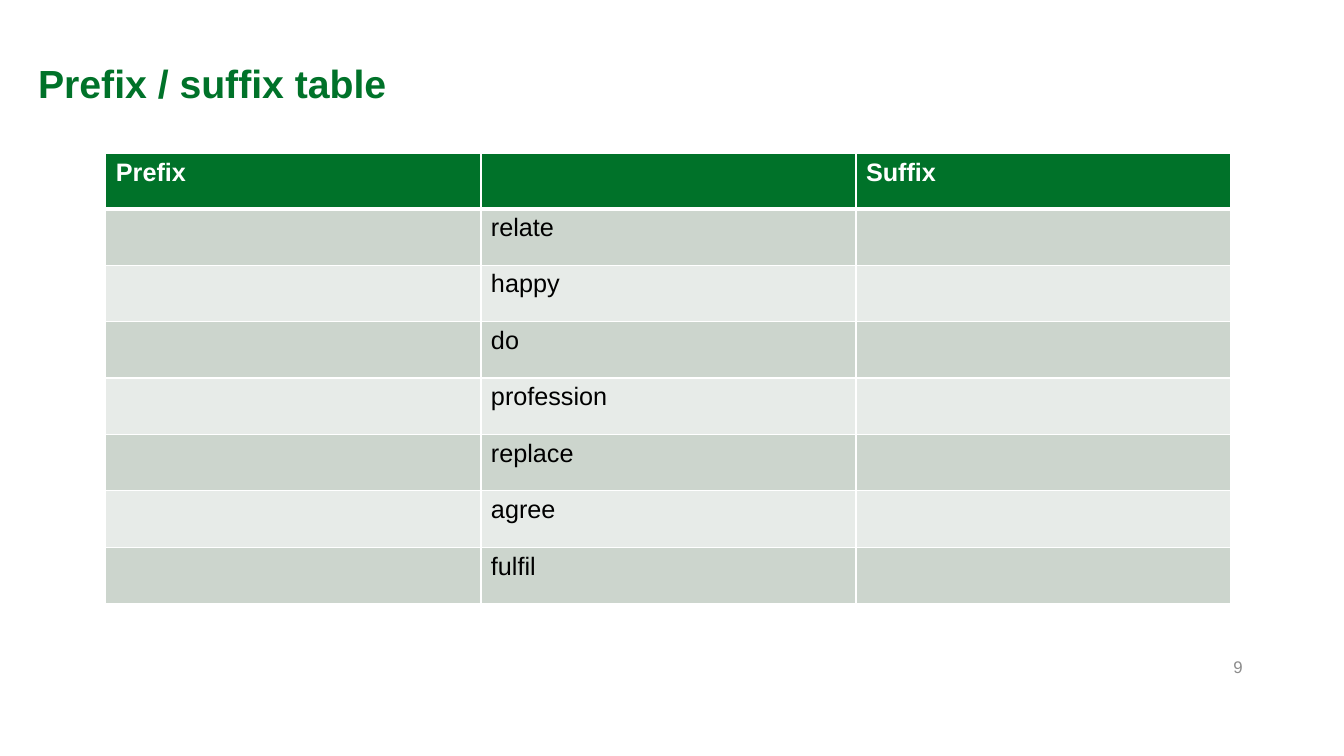
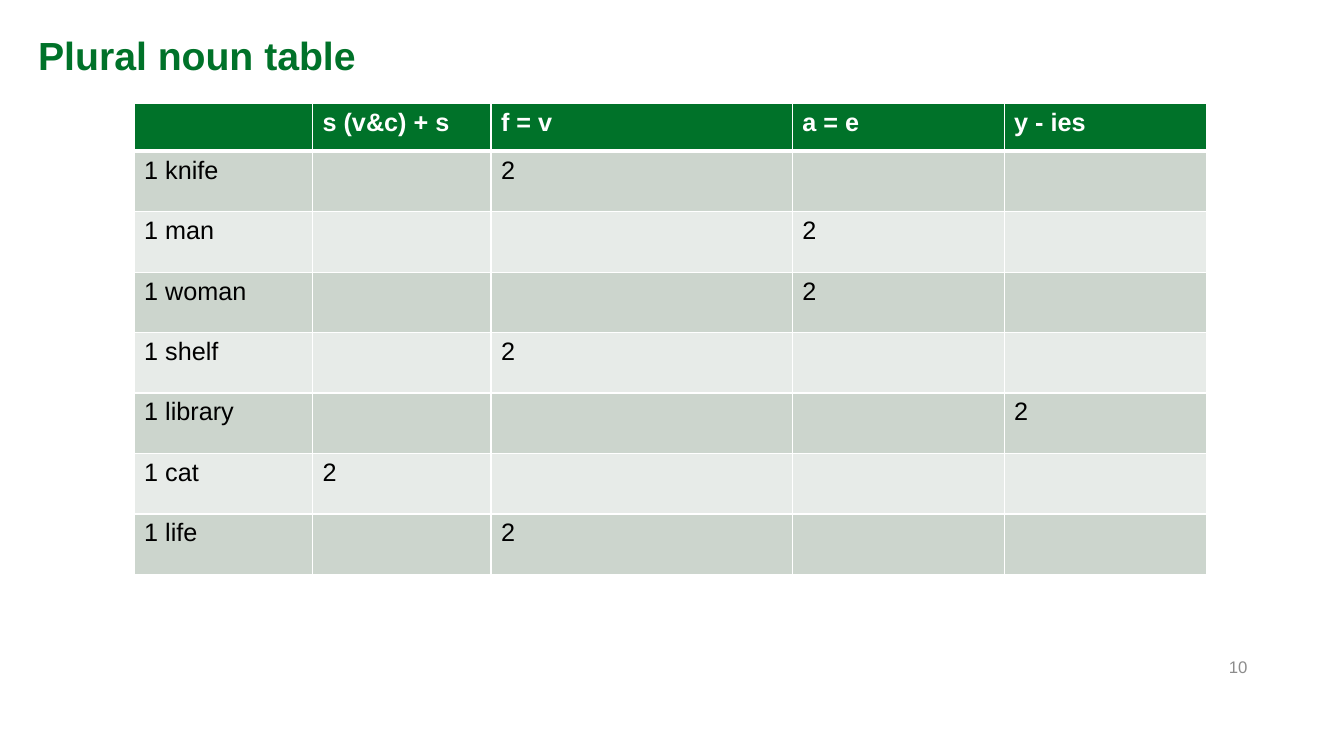
from dataclasses import dataclass

from lxml.etree import SubElement
from pptx import Presentation
from pptx.dml.color import RGBColor as Rgb
from pptx.enum.text import MSO_ANCHOR as Anchor, PP_ALIGN as Align
from pptx.oxml.ns import qn
from pptx.util import Pt

EMU_PER_PX = 9144  # 100 px to the inch


@dataclass(frozen=True)
class Theme:
    font: str = "Arial"
    green: str = "007229"
    white: str = "FFFFFF"
    black: str = "000000"
    grey: str = "8C8C8C"
    bands: tuple = ("CCD5CD", "E7EBE8")
    title_size: int = 28
    table_size: int = 18
    number_size: int = 12
    thin_rule: int = 1
    thick_rule: int = 3


THEME = Theme()


def px(*lengths):
    return [length * EMU_PER_PX for length in lengths]


def write_text(frame, text, *, size, color, bold=False, align=Align.LEFT):
    para = frame.paragraphs[0]
    para.alignment = align
    span = para.add_run()
    span.text = text
    span.font.name = THEME.font
    span.font.size = Pt(size)
    span.font.bold = bold
    span.font.color.rgb = Rgb.from_string(color)


def add_label(page, left, top, width, height, text, **text_format):
    box = page.shapes.add_textbox(*px(left, top, width, height))
    box.text_frame.word_wrap = True
    box.text_frame.vertical_anchor = Anchor.MIDDLE
    write_text(box.text_frame, text, **text_format)


def add_page(deck, title, title_top, title_width, number):
    page = deck.slides.add_slide(deck.slide_layouts[6])
    add_label(page, 28, title_top, title_width, 47, title,
              size=THEME.title_size, color=THEME.green, bold=True)
    add_label(page, 1198, 642, 60, 40, str(number),
              size=THEME.number_size, color=THEME.grey, align=Align.CENTER)
    return page


def draw_borders(cell, top, bottom):
    """Rule the cell in white; top and bottom are widths in points."""
    properties = cell._tc.get_or_add_tcPr()
    sides = {"L": THEME.thin_rule, "R": THEME.thin_rule, "T": top, "B": bottom}
    for side, width in sides.items():
        line = SubElement(properties, qn(f"a:ln{side}"), w=str(Pt(width)))
        fill = SubElement(line, qn("a:solidFill"))
        SubElement(fill, qn("a:srgbClr"), val=THEME.white)


def style_cell(cell, row_index):
    """Give a cell its borders and its header or band fill."""
    draw_borders(
        cell,
        top=THEME.thick_rule if row_index == 1 else THEME.thin_rule,
        bottom=THEME.thick_rule if row_index == 0 else THEME.thin_rule,
    )
    fill = THEME.bands[(row_index - 1) % 2] if row_index else THEME.green
    cell.fill.solid()
    cell.fill.fore_color.rgb = Rgb.from_string(fill)


def add_word_table(page, left, top, widths, header_height, row_height, rows):
    heights = [header_height] + [row_height] * (len(rows) - 1)
    table = page.shapes.add_table(
        len(rows), len(widths), *px(left, top, sum(widths), sum(heights))).table
    for column, width in zip(table.columns, px(*widths)):
        column.width = width
    for row_index, (texts, height) in enumerate(zip(rows, px(*heights))):
        table.rows[row_index].height = height
        is_header = row_index == 0
        for column_index, text in enumerate(texts):
            cell = table.cell(row_index, column_index)
            style_cell(cell, row_index)
            if text:
                write_text(cell.text_frame, text, size=THEME.table_size, bold=is_header,
                           color=THEME.white if is_header else THEME.black)


def add_affix_page(deck):
    words = ["relate", "happy", "do", "profession", "replace", "agree", "fulfil"]
    rows = [("Prefix", "", "Suffix")] + [("", word, "") for word in words]
    page = add_page(deck, "Prefix / suffix table", 59, 410, 9)
    add_word_table(page, 105, 152, [372] * 3, 55, 56, rows)


def add_plural_page(deck):
    rules = ["s (v&c) + s", "f = v", "a = e", "y - ies"]
    rule_of_noun = {
        "knife": "f = v",
        "man": "a = e",
        "woman": "a = e",
        "shelf": "f = v",
        "library": "y - ies",
        "cat": "s (v&c) + s",
        "life": "f = v",
    }
    rows = [["", *rules]]
    for noun, noun_rule in rule_of_noun.items():
        rows.append([f"1 {noun}"] + ["2" if rule == noun_rule else "" for rule in rules])
    page = add_page(deck, "Plural noun table", 31, 371, 10)
    add_word_table(page, 133, 103, [177, 177, 299, 210, 201], 47, 60, rows)


def main():
    deck = Presentation()
    deck.slide_width, deck.slide_height = px(1333, 750)
    add_affix_page(deck)
    add_plural_page(deck)
    deck.save("out.pptx")


if __name__ == "__main__":
    main()
